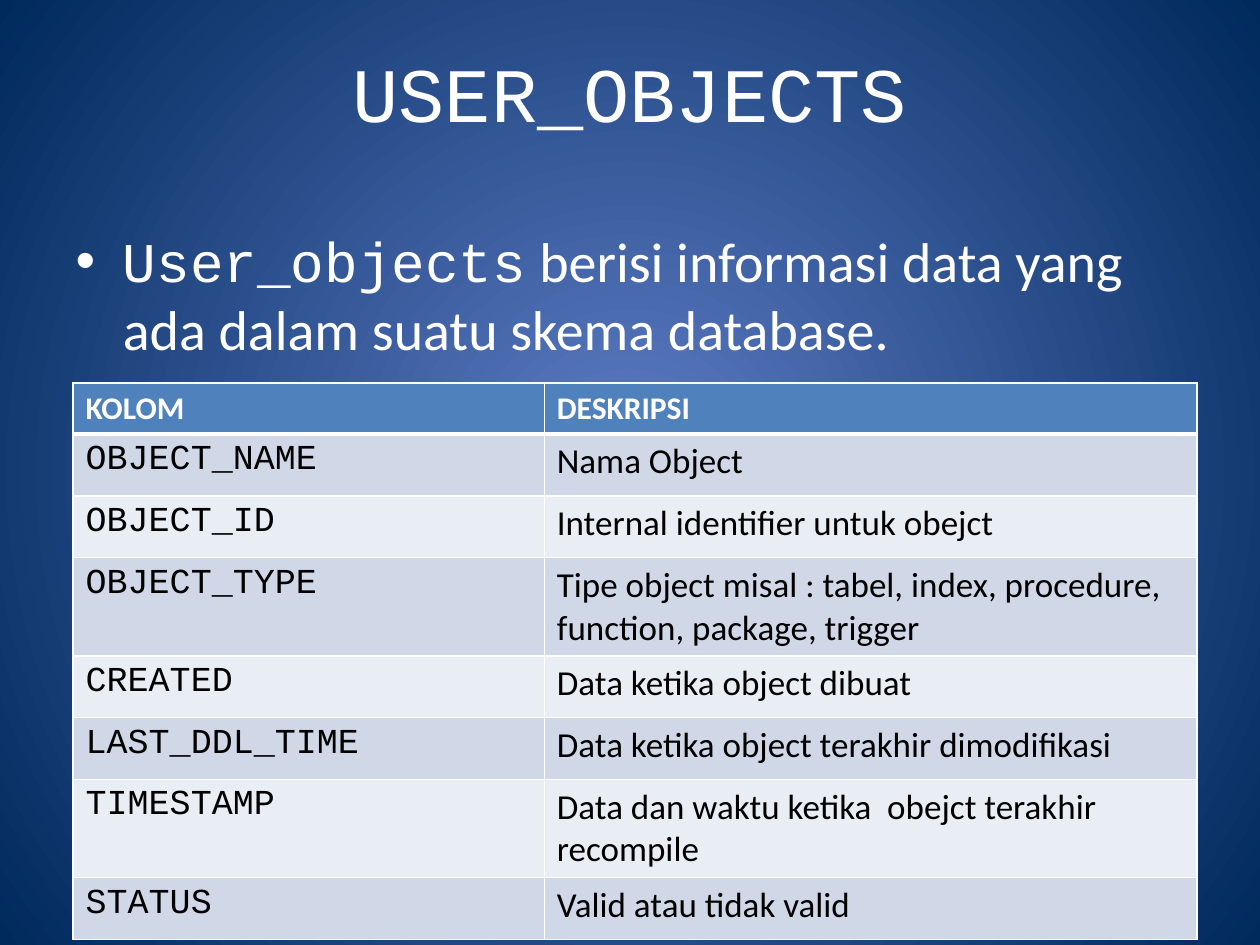
from lxml import etree
from pptx import Presentation
from pptx.dml.color import RGBColor
from pptx.enum.text import MSO_ANCHOR, PP_ALIGN
from pptx.oxml.ns import qn
from pptx.util import Inches, Pt

MIDDLE = MSO_ANCHOR.MIDDLE
CENTER = PP_ALIGN.CENTER

TITLE = "USER_OBJECTS"
INTRO_TERM = "User_objects"
INTRO_TEXT = " berisi informasi data yang ada dalam suatu skema database."
HEADER = ("KOLOM", "DESKRIPSI")
COLUMNS = [
    ("OBJECT_NAME", "Nama Object"),
    ("OBJECT_ID", "Internal identifier untuk obejct"),
    ("OBJECT_TYPE", "Tipe object misal : tabel, index, procedure, function, package, trigger"),
    ("CREATED", "Data ketika object dibuat"),
    ("LAST_DDL_TIME", "Data ketika object terakhir dimodifikasi"),
    ("TIMESTAMP", "Data dan waktu ketika  obejct terakhir recompile"),
    ("STATUS", "Valid atau tidak valid"),
]

THEME = {
    "glow": "5E7CC5", "edge": "00295C", "light": "FFFFFF", "dark": "000000",
    "header": "4F81BD", "bands": ("D0D8E8", "E9EDF4"),
    "code": "Courier New", "prose": "Calibri",
    "title": 44, "body": 32, "heading": 18, "cell": 20,
    "rule": 1, "header_rule": 3,
}
TITLE_BOX = (0.5, 0.17, 9, 1.12)
BODY_BOX = (0.5, 1.75, 9, 4.95)
TABLE_AT = (0.58, 3.04)
COLUMN_WIDTHS = (3.74, 5.18)
HEADER_HEIGHT, ROW_HEIGHT = 0.32, 0.49


def rgb(name):
    return RGBColor.from_string(THEME.get(name, name))


def place(placeholder, box):
    for side, length in zip(("left", "top", "width", "height"), box):
        setattr(placeholder, side, Inches(length))


def write(paragraph, text, face, size, color, bold=False):
    run = paragraph.add_run()
    run.text = text
    formats = {"name": THEME[face], "size": Pt(THEME[size]), "bold": bold}
    for key, value in formats.items():
        setattr(run.font, key, value)
    run.font.color.rgb = rgb(color)


def paint_background(slide):
    fill = slide.background.fill
    fill.gradient()
    for stop, color, position in zip(fill.gradient_stops, ("glow", "edge"), (0, 1)):
        stop.color.rgb = rgb(color)
        stop.position = position
    linear = next(slide.background._cSld.iter(qn("a:lin")))
    circle = etree.Element(qn("a:path"), {"path": "circle"})
    etree.SubElement(circle, qn("a:fillToRect"), {side: "50000" for side in "ltrb"})
    linear.getparent().replace(linear, circle)


def rule_cell(cell, widths):
    properties = cell._tc.get_or_add_tcPr()
    for index, (side, width) in enumerate(zip("LRTB", widths)):
        line = etree.Element(qn(f"a:ln{side}"), {"w": str(Pt(width))})
        solid = etree.SubElement(line, qn("a:solidFill"))
        etree.SubElement(solid, qn("a:srgbClr"), {"val": THEME["light"]})
        properties.insert(index, line)


def add_dictionary(slide):
    rows = [HEADER, *COLUMNS]
    heights = [HEADER_HEIGHT] + [ROW_HEIGHT] * len(COLUMNS)
    size = (sum(COLUMN_WIDTHS), sum(heights))
    table = slide.shapes.add_table(
        len(rows), len(HEADER), *map(Inches, TABLE_AT + size)).table
    for column, width in zip(table.columns, COLUMN_WIDTHS):
        column.width = Inches(width)
    thin, thick = THEME["rule"], THEME["header_rule"]
    for r, texts in enumerate(rows):
        table.rows[r].height = Inches(heights[r])
        is_header = r == 0
        for c, text in enumerate(texts):
            cell = table.cell(r, c)
            cell.fill.solid()
            cell.fill.fore_color.rgb = rgb("header" if is_header else THEME["bands"][(r - 1) % 2])
            rule_cell(cell, (thin, thin, thick if r == 1 else thin, thick if is_header else thin))
            paragraph = cell.text_frame.paragraphs[0]
            if is_header:
                write(paragraph, text, "prose", "heading", "light", True)
            else:
                write(paragraph, text, ("code", "prose")[c], "cell", "dark")


def main():
    """Build the USER_OBJECTS slide."""
    deck = Presentation()
    deck.slide_width, deck.slide_height = Inches(10), Inches(7.5)
    slide = deck.slides.add_slide(deck.slide_layouts[1])
    paint_background(slide)

    title, body = slide.placeholders
    place(title, TITLE_BOX)
    title.text_frame.vertical_anchor = MIDDLE
    heading = title.text_frame.paragraphs[0]
    heading.alignment = CENTER
    write(heading, TITLE, "code", "title", "light")

    place(body, BODY_BOX)
    intro = body.text_frame.paragraphs[0]
    write(intro, INTRO_TERM, "code", "body", "light")
    write(intro, INTRO_TEXT, "prose", "body", "light")

    add_dictionary(slide)
    deck.save("out.pptx")


if __name__ == "__main__":
    main()
